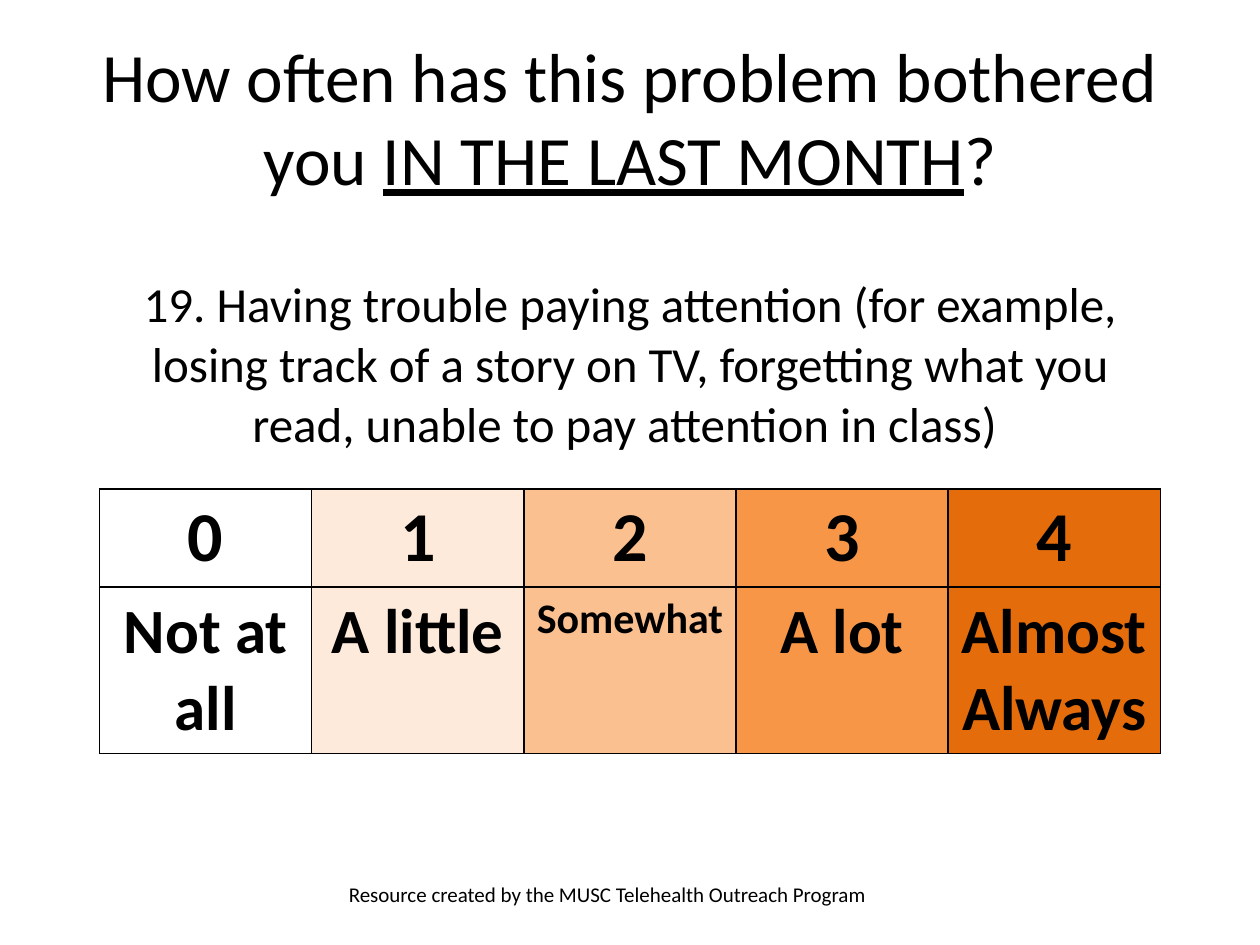
import pptx
import pptx.dml.color
import pptx.enum.text
import pptx.oxml
import pptx.oxml.ns
import pptx.util
from dataclasses import dataclass

Inches = pptx.util.Inches
Pt = pptx.util.Pt
CENTER = pptx.enum.text.PP_ALIGN.CENTER
MIDDLE = pptx.enum.text.MSO_ANCHOR.MIDDLE


@dataclass(frozen=True)
class Theme:
    font: str = "Calibri"
    ink: str = "000000"
    scale: tuple = ("FFFFFF", "FDEADA", "FAC090", "F79646", "E46C0A")
    title: float = 39.6
    question: float = 28
    score: float = 40
    answer: float = 36
    long_answer: float = 24
    credit: float = 12
    border: float = 1


def add_text(para, text, *, theme, size, bold=False, underline=False):
    span = para.add_run()
    span.text = text
    font = span.font
    font.name, font.size = theme.font, Pt(size)
    font.bold, font.underline = bold, underline
    font.color.rgb = pptx.dml.color.RGBColor.from_string(theme.ink)


class PageBuilder:
    def __init__(self, page, theme):
        self.page = page
        self.theme = theme

    def text_box(self, at, spans, size, align=None, anchor=None):
        box = self.page.shapes.add_textbox(*map(Inches, at))
        frame = box.text_frame
        frame.word_wrap = True
        frame.vertical_anchor = anchor
        para = frame.paragraphs[0]
        para.alignment = align
        for text, underline in spans:
            add_text(para, text, theme=self.theme, size=size, underline=underline)

    def table(self, at, row_heights, columns):
        left, top, width = at
        frame = self.page.shapes.add_table(
            len(row_heights), columns, Inches(left), Inches(top),
            Inches(width), Inches(sum(row_heights)))
        table = frame.table
        table.first_row = table.horz_banding = False
        for row, height in zip(table.rows, row_heights):
            row.height = Inches(height)
        for column in table.columns:
            column.width = Inches(width / columns)
        return table

    def cell(self, cell, text, size, bold=False, fill=None, border=False):
        para = cell.text_frame.paragraphs[0]
        para.alignment = CENTER
        add_text(para, text, theme=self.theme, size=size, bold=bold)
        self.cell_borders(cell, border)
        if fill:
            cell.fill.solid()
            cell.fill.fore_color.rgb = pptx.dml.color.RGBColor.from_string(fill)
        else:
            cell.fill.background()

    def cell_borders(self, cell, visible):
        paint = (f'<a:solidFill><a:srgbClr val="{self.theme.ink}"/></a:solidFill>'
                 if visible else "<a:noFill/>")
        properties = cell._tc.get_or_add_tcPr()
        for side in "LRTB":
            properties.append(pptx.oxml.parse_xml(
                f'<a:ln{side} {pptx.oxml.ns.nsdecls("a")} '
                f'w="{Pt(self.theme.border)}">{paint}</a:ln{side}>'))


def main():
    theme = Theme()
    deck = pptx.Presentation()
    deck.slide_width, deck.slide_height = Inches(10), Inches(7.5)
    page = deck.slides.add_slide(deck.slide_layouts[6])
    builder = PageBuilder(page, theme)

    # Title
    builder.text_box(
        (0.5, 0.3, 9, 1.25),
        [("How often has this problem bothered you ", False),
         ("IN THE LAST MONTH", True), ("?", False)],
        theme.title, CENTER, MIDDLE)

    # Credit
    builder.text_box(
        (2.67, 6.95, 4.5, 0.4),
        [("Resource created by the MUSC Telehealth Outreach Program", False)],
        theme.credit)

    # Answer scale
    answers = [("Not at all", theme.answer), ("A little", theme.answer),
               ("Somewhat", theme.long_answer), ("A lot", theme.answer),
               ("Almost Always", theme.answer)]
    scale = builder.table((0.79, 3.88, 8.42), (0.78, 1.32), len(answers))
    for score, ((answer, size), fill) in enumerate(zip(answers, theme.scale)):
        look = dict(bold=True, fill=fill, border=True)
        builder.cell(scale.cell(0, score), str(score), theme.score, **look)
        builder.cell(scale.cell(1, score), answer, size, **look)

    # Question
    question = builder.table((0.79, 2.19, 8.42), (1.4,), 1).cell(0, 0)
    question.margin_left = question.margin_right = Inches(0.05)
    question.margin_top = question.margin_bottom = 0
    builder.cell(
        question,
        "19. Having trouble paying attention (for example, losing track of a story "
        "on TV, forgetting what you read, unable to pay attention in class) ",
        theme.question)

    deck.save("out.pptx")


if __name__ == "__main__":
    main()
